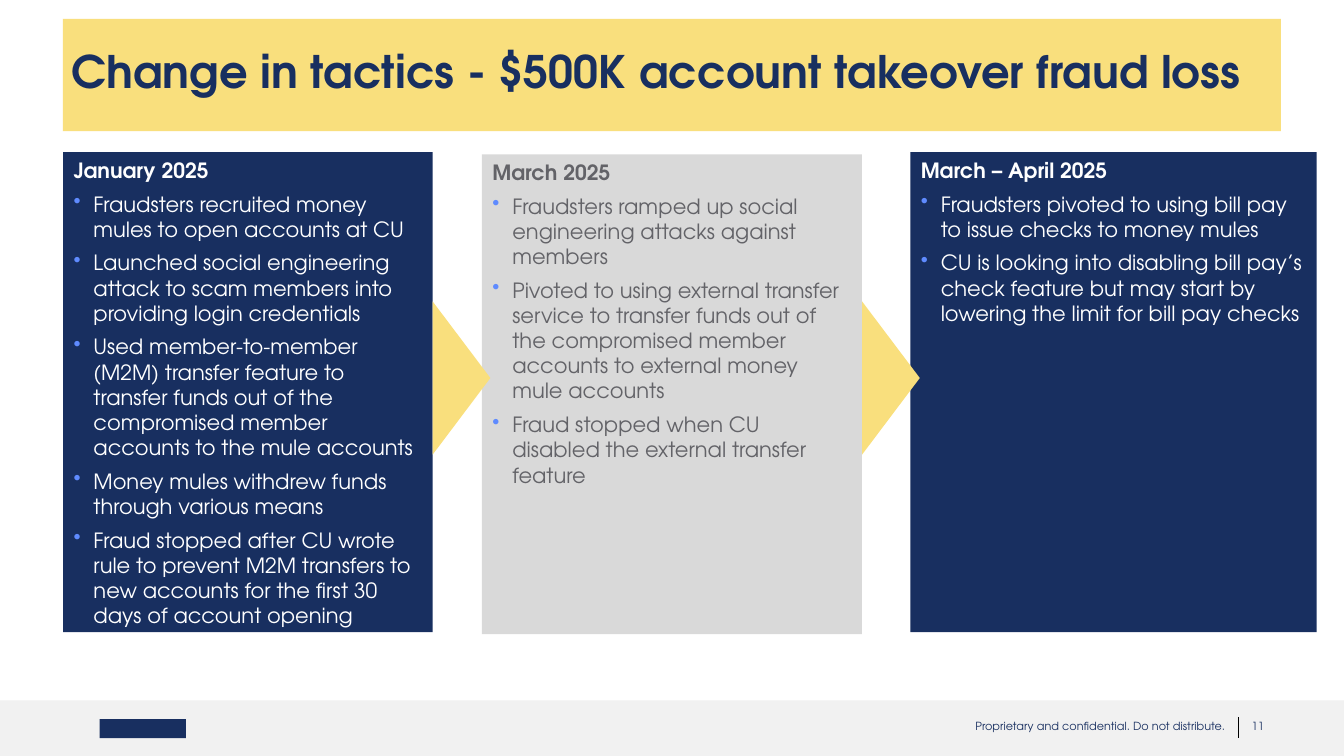
from dataclasses import dataclass

from pptx import Presentation
from pptx.dml.color import RGBColor
from pptx.enum.shapes import MSO_CONNECTOR as CONN, MSO_SHAPE as SHAPE
from pptx.enum.text import MSO_ANCHOR as ANCHOR, PP_ALIGN as ALIGN
from pptx.oxml.ns import qn
from pptx.shapes.autoshape import Shape
from pptx.slide import Slide
from pptx.text.text import TextFrame, _Paragraph as Paragraph
from pptx.util import Pt

PX = 9525
FONT = "TeX Gyre Adventor"
NAVY = RGBColor(0x18, 0x2F, 0x60)
YELLOW = RGBColor(0xF9, 0xDF, 0x7D)
SILVER = RGBColor(0xD9, 0xD9, 0xD9)
SLATE = RGBColor(0x63, 0x63, 0x68)
MIST = RGBColor(0xF1, 0xF1, 0xF1)
WHITE = RGBColor(0xFF, 0xFF, 0xFF)
BLACK = RGBColor(0x00, 0x00, 0x00)
BULLET_BLUE = "5F8BFF"
BULLET_INDENT = 19


@dataclass(frozen=True)
class Box:
    x: int
    y: int
    w: int
    h: int

    def emu(self) -> tuple[int, int, int, int]:
        return self.x * PX, self.y * PX, self.w * PX, self.h * PX


@dataclass(frozen=True)
class Panel:
    box: Box
    fill: RGBColor
    color: RGBColor
    right_inset: int
    heading: str
    points: tuple[str, ...]


@dataclass(frozen=True)
class FooterText:
    box: Box
    left_inset: int
    text: str


PANELS = (
    Panel(Box(60, 145, 352, 457), NAVY, WHITE, 14, "January 2025", (
        "Fraudsters recruited money mules to open accounts at CU",
        "Launched social engineering attack to scam members into providing login credentials",
        "Used member-to-member (M2M) transfer feature to transfer funds out of the "
        "compromised member accounts to the mule accounts",
        "Money mules withdrew funds through various means",
        "Fraud stopped after CU wrote rule to prevent M2M transfers to new accounts "
        "for the first 30 days of account opening",
    )),
    Panel(Box(459, 147, 362, 457), SILVER, SLATE, 16, "March 2025", (
        "Fraudsters ramped up social engineering attacks against members",
        "Pivoted to using external transfer service to transfer funds out of the "
        "compromised member accounts to external money mule accounts",
        "Fraud stopped when CU disabled the external transfer feature",
    )),
    Panel(Box(867, 145, 387, 457), NAVY, WHITE, 11, "March – April 2025", (
        "Fraudsters pivoted to using bill pay to issue checks to money mules",
        "CU is looking into disabling bill pay’s check feature but may start by "
        "lowering the limit for bill pay checks",
    )),
)
FOOTER_TEXTS = (
    FooterText(Box(927, 684, 243, 17), 2, "Proprietary and confidential. Do not distribute."),
    FooterText(Box(1188, 684, 21, 17), 4, "11"),
)
ARROWS = tuple(Box(p.box.x + p.box.w, 287, 55, 146) for p in PANELS[:-1])


def paint(s: Shape, fill: RGBColor) -> None:
    s.shadow.inherit = False
    s.fill.solid()
    s.fill.fore_color.rgb = fill
    s.line.fill.background()


def add_rect(slide: Slide, box: Box, fill: RGBColor) -> Shape:
    s = slide.shapes.add_shape(SHAPE.RECTANGLE, *box.emu())
    paint(s, fill)
    return s


def set_frame(tf: TextFrame, left: int, top: int, right: int = 0, wrap: bool = True) -> None:
    values = {
        "margin_left": left * PX,
        "margin_top": top * PX,
        "margin_right": right * PX,
        "margin_bottom": 0,
        "vertical_anchor": ANCHOR.TOP,
        "word_wrap": wrap,
    }
    for name, value in values.items():
        setattr(tf, name, value)


def write(p: Paragraph, text: str, size: int, color: RGBColor, bold: bool = False) -> None:
    p.alignment = ALIGN.LEFT
    r = p.add_run()
    r.text = text
    for name, value in {"name": FONT, "size": Pt(size), "bold": bold}.items():
        setattr(r.font, name, value)
    r.font.color.rgb = color


def add_bullet(p: Paragraph) -> None:
    pPr = p._p.get_or_add_pPr()
    pPr.set("marL", str(BULLET_INDENT * PX))
    pPr.set("indent", str(-BULLET_INDENT * PX))
    clr = pPr.makeelement(qn("a:buClr"), {})
    clr.append(clr.makeelement(qn("a:srgbClr"), {"val": BULLET_BLUE}))
    pPr.append(clr)
    pPr.append(pPr.makeelement(qn("a:buChar"), {"char": "•"}))
    p.space_before = Pt(6)


def add_panel(slide: Slide, panel: Panel) -> None:
    tf = add_rect(slide, panel.box, panel.fill).text_frame
    set_frame(tf, 10, 5, panel.right_inset)
    write(tf.paragraphs[0], panel.heading, 15, panel.color, bold=True)
    for point in panel.points:
        p = tf.add_paragraph()
        add_bullet(p)
        write(p, point, 15, panel.color)


def add_arrow(slide: Slide, box: Box) -> None:
    fb = slide.shapes.build_freeform(box.x, box.y, scale=PX)
    fb.add_line_segments([(box.x + box.w, box.y + box.h // 2), (box.x, box.y + box.h)])
    paint(fb.convert_to_shape(), YELLOW)


def add_title(slide: Slide) -> None:
    tf = add_rect(slide, Box(60, 18, 1160, 107), YELLOW).text_frame
    set_frame(tf, 8, 24)
    write(tf.paragraphs[0], "Change in tactics - $500K account takeover fraud loss", 32, NAVY, bold=True)


def add_footer(slide: Slide) -> None:
    add_rect(slide, Box(0, 667, 1280, 53), MIST)
    add_rect(slide, Box(95, 685, 82, 18), NAVY)
    divider = slide.shapes.add_connector(CONN.STRAIGHT, 1179 * PX, 683 * PX, 1179 * PX, 703 * PX)
    divider.line.color.rgb = BLACK
    divider.line.width = Pt(0.5)
    spPr = divider._element.spPr
    spPr.append(spPr.makeelement(qn("a:effectLst"), {}))
    for item in FOOTER_TEXTS:
        tf = slide.shapes.add_textbox(*item.box.emu()).text_frame
        set_frame(tf, item.left_inset, 1, wrap=False)
        write(tf.paragraphs[0], item.text, 8, NAVY)


def main() -> None:
    prs = Presentation()
    prs.slide_width, prs.slide_height = 1280 * PX, 720 * PX
    slide = prs.slides.add_slide(prs.slide_layouts[6])
    add_footer(slide)
    add_title(slide)
    for panel in PANELS:
        add_panel(slide, panel)
    for arrow in ARROWS:
        add_arrow(slide, arrow)
    prs.save("out.pptx")


if __name__ == "__main__":
    main()
